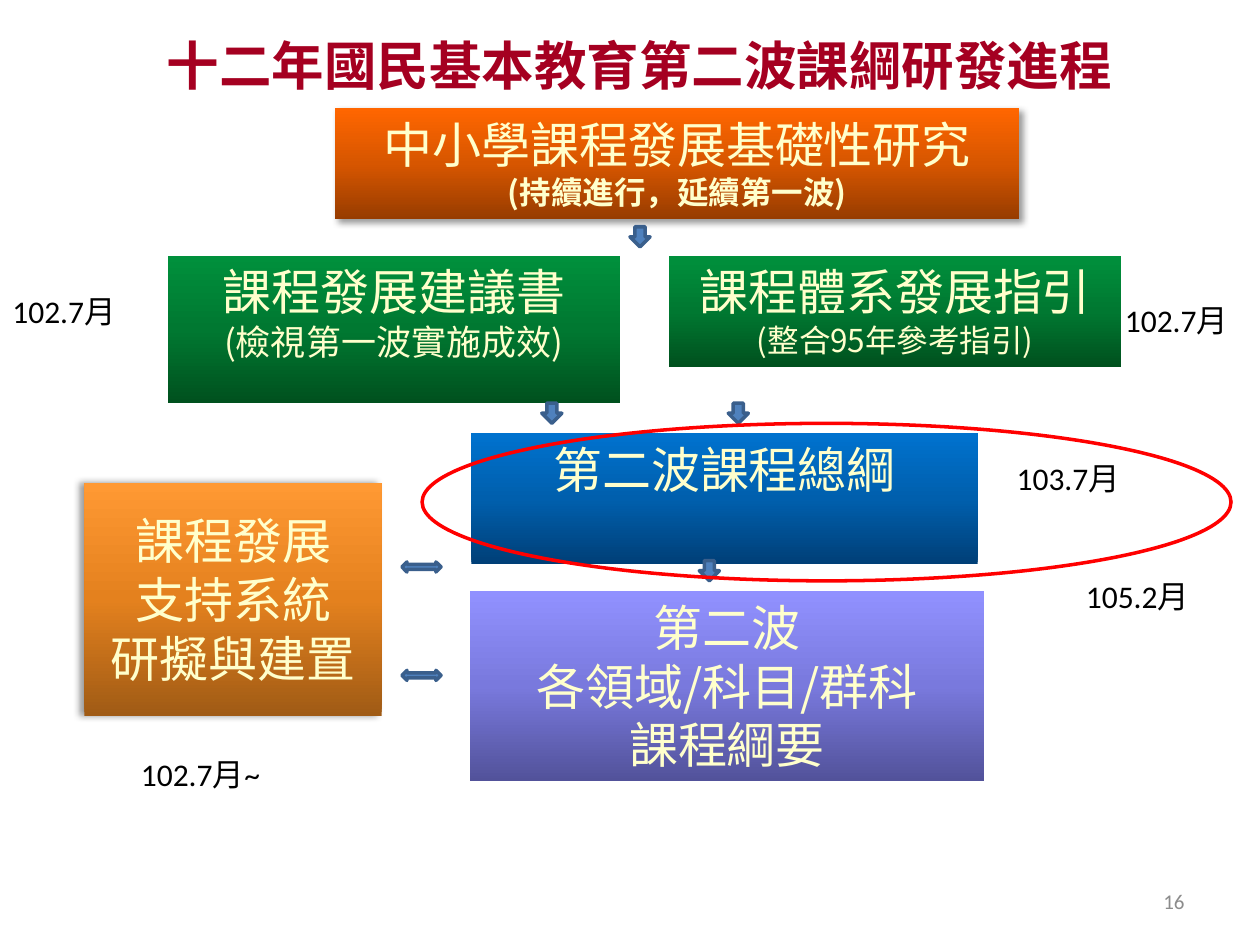
from copy import deepcopy

from lxml.etree import SubElement
from pptx import Presentation
from pptx.dml.color import RGBColor
from pptx.enum.shapes import MSO_SHAPE
from pptx.enum.text import MSO_ANCHOR, PP_ALIGN
from pptx.oxml.ns import qn
from pptx.util import Inches, Pt

CJK_FONT = "Noto Sans CJK SC"
LATIN_FONT = "Calibri"
CREAM = RGBColor(0xFF, 0xFF, 0xCC)
CRIMSON = RGBColor(0xA5, 0x00, 0x21)
BLACK = RGBColor(0, 0, 0)
GRAY = RGBColor(0x8C, 0x8C, 0x8C)
RED = RGBColor(0xFF, 0, 0)
ARROW_FILL = RGBColor(0x4F, 0x81, 0xBD)
ARROW_LINE = RGBColor(0x3A, 0x5F, 0x8C)


def gradient(*codes):
    return [RGBColor.from_string(code) for code in codes]


ORANGE = gradient("973C00", "D75600", "FF6600")
GREEN = gradient("00511E", "007831", "00903C")
BLUE = gradient("003F77", "005FAD", "0072CE")
VIOLET = gradient("52529A", "7979DD", "9191FF")
AMBER = gradient("A05B15", "E4811E", "FF9933")

TOP, MIDDLE = MSO_ANCHOR.TOP, MSO_ANCHOR.MIDDLE

# place, gradient, anchor, shadow direction, lines of (text, size, bold)
STAGES = [
    ((2.66, 0.86, 5.43, 0.88), ORANGE, TOP, 45,
     [("中小學課程發展基礎性研究", 28, False), ("(持續進行，延續第一波)", 18, True)]),
    ((1.33, 2.03, 3.59, 1.17), GREEN, TOP, None,
     [("課程發展建議書", 28, False), ("(檢視第一波實施成效)", 20, False)]),
    ((5.31, 2.03, 3.59, 0.88), GREEN, TOP, None,
     [("課程體系發展指引", 28, False), ("(整合95年參考指引)", 18, False)]),
    ((3.74, 3.44, 4.02, 1.04), BLUE, TOP, None, [("第二波課程總綱", 28, False)]),
    ((3.73, 4.69, 4.08, 1.51), VIOLET, TOP, None,
     [("第二波", 28, False), ("各領域/科目/群科", 28, False), ("課程綱要", 28, False)]),
    ((0.67, 3.83, 2.36, 1.85), AMBER, MIDDLE, 180,
     [("課程發展", 28, False), ("支持系統", 28, False), ("研擬與建置", 28, False)]),
]
DOWN_ARROWS = [(5, 1.8), (4.3, 3.2), (5.78, 3.2), (5.55, 4.45)]
TWO_WAY_ARROWS = [(3.19, 4.46), (3.19, 5.32)]
DATES = [
    ("102.7月", 0, 2.27, 1.25),
    ("102.7月", 8.83, 2.34, 1.17),
    ("102.7月~", 1.02, 5.94, 1.25),
    ("103.7月", 7.97, 3.59, 1.25),
    ("105.2月", 8.52, 4.53, 1.25),
]


def write(shape, lines, font_name, color, alignment, anchor=TOP):
    frame = shape.text_frame
    frame.word_wrap = True
    frame.vertical_anchor = anchor
    frame.text = "\n".join(text for text, _, _ in lines)
    for paragraph, (_, size, bold) in zip(frame.paragraphs, lines):
        paragraph.alignment = alignment
        font = paragraph.runs[0].font
        font.name, font.size, font.bold = font_name, Pt(size), bold
        font.color.rgb = color
        if font_name == CJK_FONT:
            properties = paragraph.runs[0]._r.get_or_add_rPr()
            SubElement(properties, qn("a:ea"), typeface=font_name)


def add_text(slide, place, text, size, font_name, color, alignment, anchor=TOP, bold=False):
    box = slide.shapes.add_textbox(*map(Inches, place))
    write(box, [(text, size, bold)], font_name, color, alignment, anchor)


def add_shape(slide, kind, place):
    shape = slide.shapes.add_shape(kind, *map(Inches, place))
    shape.shadow.inherit = False
    return shape


def fill_gradient(shape, colors):
    fill = shape.fill
    fill.gradient()
    fill.gradient_angle = 90
    stop_list = shape._element.spPr.find(".//" + qn("a:gsLst"))
    stop_list.insert(1, deepcopy(stop_list[0]))
    for stop, position, color in zip(fill.gradient_stops, (0, 0.5, 1), colors):
        stop.position = position
        stop.color.rgb = color


def cast_shadow(shape, direction):
    effects = shape._element.spPr.find(qn("a:effectLst"))
    shadow = SubElement(effects, qn("a:outerShdw"), blurRad=str(Pt(4)), dist=str(Pt(3)),
                        dir=str(direction * 60000), rotWithShape="0")
    color = SubElement(shadow, qn("a:srgbClr"), val="000000")
    SubElement(color, qn("a:alpha"), val="40000")


def add_stage(slide, place, colors, anchor, shadow_direction, lines):
    shape = add_shape(slide, MSO_SHAPE.RECTANGLE, place)
    fill_gradient(shape, colors)
    shape.line.fill.background()
    if shadow_direction is not None:
        cast_shadow(shape, shadow_direction)
    write(shape, lines, CJK_FONT, CREAM, PP_ALIGN.CENTER, anchor)


def add_arrow(slide, kind, place):
    shape = add_shape(slide, kind, place)
    shape.fill.solid()
    shape.fill.fore_color.rgb = ARROW_FILL
    shape.line.color.rgb = ARROW_LINE
    shape.line.width = Pt(2)


def main():
    presentation = Presentation()
    presentation.slide_width = Inches(10)
    presentation.slide_height = Inches(7.5)
    slide = presentation.slides.add_slide(presentation.slide_layouts[6])

    add_text(slide, (7.17, 6.95, 2.33, 0.4), "16", 12, LATIN_FONT, GRAY, PP_ALIGN.RIGHT, MIDDLE)
    for stage in STAGES:
        add_stage(slide, *stage)
    for left, top in DOWN_ARROWS:
        add_arrow(slide, MSO_SHAPE.DOWN_ARROW, (left, top, 0.16, 0.16))
    for left, top in TWO_WAY_ARROWS:
        add_arrow(slide, MSO_SHAPE.LEFT_RIGHT_ARROW, (left, top, 0.31, 0.08))
    add_text(slide, (0.35, 0.21, 9.45, 0.61), "十二年國民基本教育第二波課綱研發進程",
             30, CJK_FONT, CRIMSON, PP_ALIGN.CENTER, bold=True)
    for text, left, top, width in DATES:
        add_text(slide, (left, top, width, 0.4), text, 18, LATIN_FONT, BLACK, PP_ALIGN.LEFT)

    highlight = add_shape(slide, MSO_SHAPE.OVAL, (3.35, 3.36, 6.42, 1.25))
    highlight.fill.background()
    highlight.line.color.rgb = RED
    highlight.line.width = Pt(2)

    presentation.save("out.pptx")


if __name__ == "__main__":
    main()
